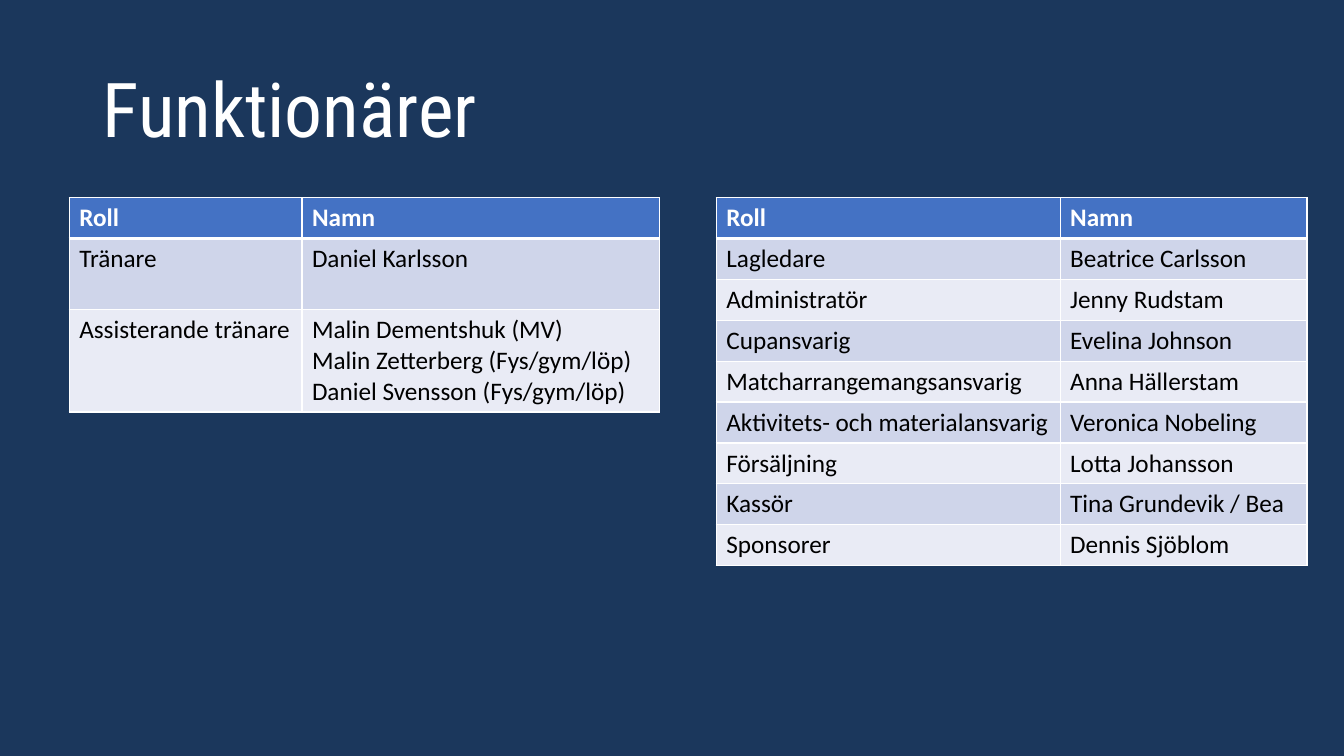
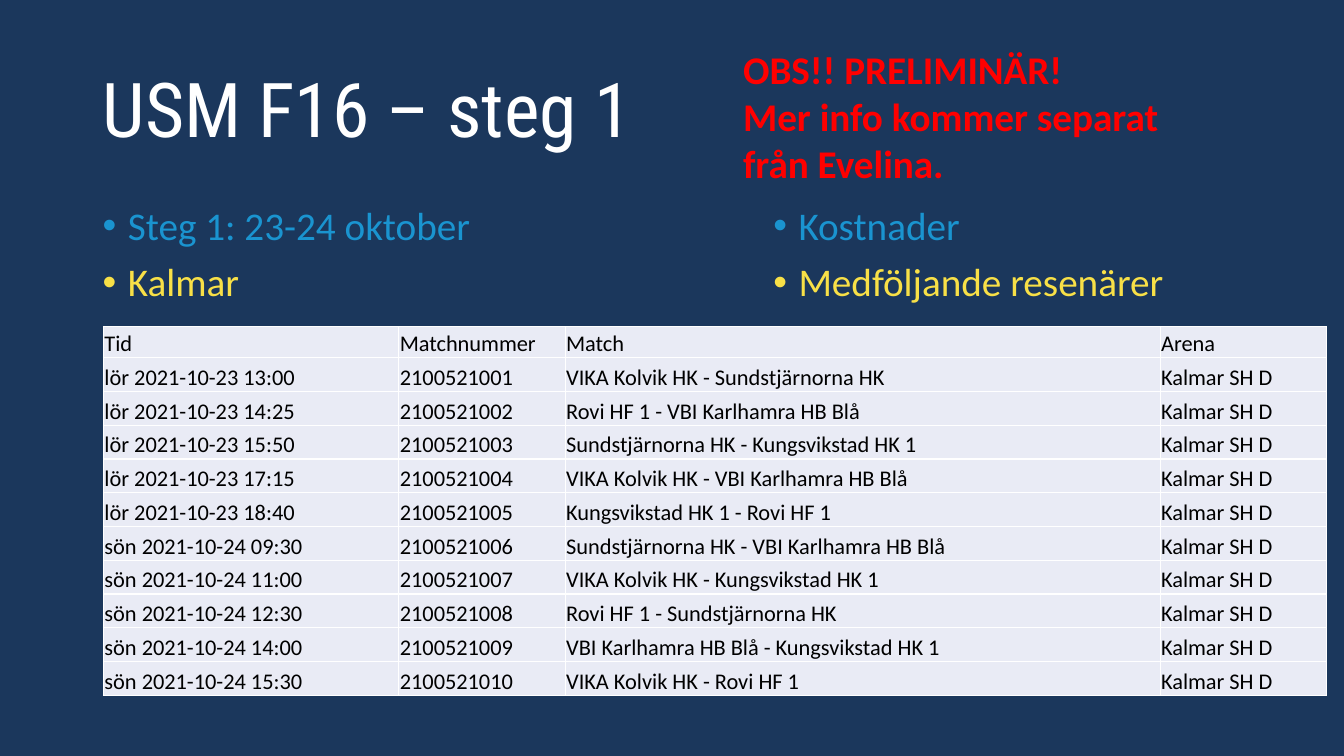
from dataclasses import dataclass

from lxml import etree
from pptx import Presentation
from pptx.dml.color import RGBColor
from pptx.enum.text import MSO_ANCHOR
from pptx.oxml.ns import qn
from pptx.util import Inches, Pt

TOP, MIDDLE, BOTTOM = MSO_ANCHOR.TOP, MSO_ANCHOR.MIDDLE, MSO_ANCHOR.BOTTOM
BLANK_LAYOUT = 6
WIDTH, HEIGHT = Inches(13.33), Inches(7.5)


# Colours, fonts and type sizes
@dataclass(frozen=True)
class Theme:
    background: str = "1B375C"
    white: str = "FFFFFF"
    black: str = "000000"
    header: str = "4472C4"
    band_dark: str = "CFD5EA"
    band_light: str = "E9EBF5"
    blue: str = "1A94D0"
    yellow: str = "F8E047"
    warning: str = "FF0000"
    title_font: str = "Roboto Condensed"
    body_font: str = "Calibri"
    title_size: int = 54
    body_size: int = 28
    table_size: int = 18
    schedule_size: int = 16
    thin_line: float = 1
    thick_line: float = 3


THEME = Theme()

# Positions and sizes in percent of the slide's width and height
TITLE_AREA = (6.9, 5.33, 86.25, 19.33)
NOTICE_AREA = (54.55, 5.33, 35.5, 24.3)
BODY_AREA = (6.9, 26.67, 86.25, 63.5)
COSTS_AREA = (56.8, 26.67, 30.6, 17.6)
COACHES_LEFT, OFFICIALS_LEFT = 5.15, 53.3
ROLES_TOP, ROLES_WIDTH = 26.15, 43.95
SCHEDULE_LEFT, SCHEDULE_TOP, SCHEDULE_WIDTH = 7.7, 43.2, 91
ROLE_ROW, TALL_ROW, TRIPLE_ROW = 5.41, 9.4, 13.55
SCHEDULE_HEADER_ROW, SCHEDULE_ROW = 4.1, 4.47
# Column widths in percent of the table's width
COACH_COLUMNS = (39.4, 60.6)
OFFICIAL_COLUMNS = (58.2, 41.8)
SCHEDULE_COLUMNS = (24.15, 13.6, 48.65, 13.6)

# Table contents
ROLE_HEADER = ("Roll", "Namn")
COACHES = [
    ROLE_HEADER,
    ("Tränare", "Daniel Karlsson"),
    ("Assisterande tränare",
     "Malin Dementshuk (MV)\nMalin Zetterberg (Fys/gym/löp)\n"
     "Daniel Svensson (Fys/gym/löp)"),
]
OFFICIALS = [
    ROLE_HEADER,
    ("Lagledare", "Beatrice Carlsson"),
    ("Administratör", "Jenny Rudstam"),
    ("Cupansvarig", "Evelina Johnson"),
    ("Matcharrangemangsansvarig", "Anna Hällerstam"),
    ("Aktivitets- och materialansvarig", "Veronica Nobeling"),
    ("Försäljning", "Lotta Johansson"),
    ("Kassör", "Tina Grundevik / Bea"),
    ("Sponsorer", "Dennis Sjöblom"),
]
FIRST_MATCH_NUMBER = 2100521001
ARENA = "Kalmar SH D"
VIKA = "VIKA Kolvik HK"
SUND = "Sundstjärnorna HK"
ROVI = "Rovi HF 1"
VBI = "VBI Karlhamra HB Blå"
KUNGSVIK = "Kungsvikstad HK 1"
MATCHES = [
    ("lör 2021-10-23 13:00", VIKA, SUND),
    ("lör 2021-10-23 14:25", ROVI, VBI),
    ("lör 2021-10-23 15:50", SUND, KUNGSVIK),
    ("lör 2021-10-23 17:15", VIKA, VBI),
    ("lör 2021-10-23 18:40", KUNGSVIK, ROVI),
    ("sön 2021-10-24 09:30", SUND, VBI),
    ("sön 2021-10-24 11:00", VIKA, KUNGSVIK),
    ("sön 2021-10-24 12:30", ROVI, SUND),
    ("sön 2021-10-24 14:00", VBI, KUNGSVIK),
    ("sön 2021-10-24 15:30", VIKA, ROVI),
]


def across(percent):
    return int(WIDTH * percent / 100)


def down(percent):
    return int(HEIGHT * percent / 100)


# Text
def format_paragraph(paragraph, size, color, font=THEME.body_font, bold=False):
    for run in paragraph.runs:
        run.font.name = font
        run.font.size = Pt(size)
        run.font.bold = bold
        run.font.color.rgb = RGBColor.from_string(color)


def add_text(slide, area, text, anchor=TOP):
    left, top, width, height = area
    shape = slide.shapes.add_textbox(
        across(left), down(top), across(width), down(height))
    text_frame = shape.text_frame
    text_frame.word_wrap = True
    text_frame.vertical_anchor = anchor
    text_frame.text = text
    return text_frame.paragraphs


def add_title(slide, text):
    for paragraph in add_text(slide, TITLE_AREA, text, MIDDLE):
        paragraph.line_spacing = 0.9
        format_paragraph(paragraph, THEME.title_size, THEME.white,
                         THEME.title_font)


def add_bullets(slide, area, lines):
    paragraphs = add_text(slide, area, "\n".join(lines))
    for paragraph, color in zip(paragraphs, (THEME.blue, THEME.yellow)):
        paragraph.line_spacing = 0.9
        paragraph.space_before = Pt(10)
        format_paragraph(paragraph, THEME.body_size, color)
        properties = paragraph._p.get_or_add_pPr()
        properties.set("marL", str(Inches(0.25)))
        properties.set("indent", str(-Inches(0.25)))
        bullet_font = etree.SubElement(properties, qn("a:buFont"))
        bullet_font.set("typeface", "Arial")
        etree.SubElement(properties, qn("a:buChar")).set("char", "•")


def add_notice(slide, text):
    for paragraph in add_text(slide, NOTICE_AREA, text):
        format_paragraph(paragraph, THEME.body_size, THEME.warning, bold=True)


# Tables
def set_borders(cell, top=THEME.thin_line, bottom=THEME.thin_line):
    properties = cell._tc.get_or_add_tcPr()
    sides = {"L": THEME.thin_line, "R": THEME.thin_line, "T": top, "B": bottom}
    for position, (side, width) in enumerate(sides.items()):
        line = etree.Element(qn(f"a:ln{side}"), w=str(Pt(width)))
        fill = etree.SubElement(line, qn("a:solidFill"))
        etree.SubElement(fill, qn("a:srgbClr")).set("val", THEME.white)
        properties.insert(position, line)


def fill_cell(cell, text, fill, size, color=THEME.black, bold=False):
    cell.text_frame.text = text
    cell.fill.solid()
    cell.fill.fore_color.rgb = RGBColor.from_string(fill)
    for paragraph in cell.text_frame.paragraphs:
        format_paragraph(paragraph, size, color, bold=bold)


def add_table(slide, left, top, width, columns, row_heights):
    table = slide.shapes.add_table(
        len(row_heights), len(columns), across(left), down(top),
        across(width), down(sum(row_heights))).table
    table.first_row = table.horz_banding = False
    for column, share in zip(table.columns, columns):
        column.width = across(width * share / 100)
    for row, height in zip(table.rows, row_heights):
        row.height = down(height)
    return table


def add_role_table(slide, left, columns, row_heights, records):
    table = add_table(slide, left, ROLES_TOP, ROLES_WIDTH, columns, row_heights)
    for index, (row, record) in enumerate(zip(table.rows, records)):
        is_header = index == 0
        band = THEME.band_dark if index % 2 else THEME.band_light
        for cell, text in zip(row.cells, record):
            if is_header:
                fill_cell(cell, text, THEME.header, THEME.table_size,
                          THEME.white, bold=True)
                set_borders(cell, bottom=THEME.thick_line)
            else:
                fill_cell(cell, text, band, THEME.table_size)
                set_borders(cell, top=THEME.thick_line if index == 1
                            else THEME.thin_line)


def add_schedule(slide):
    records = [("Tid", "Matchnummer", "Match", "Arena")]
    for number, (time, home, away) in enumerate(MATCHES, FIRST_MATCH_NUMBER):
        records.append((time, str(number), f"{home} - {away}", ARENA))
    row_heights = [SCHEDULE_HEADER_ROW] + [SCHEDULE_ROW] * len(MATCHES)
    table = add_table(slide, SCHEDULE_LEFT, SCHEDULE_TOP, SCHEDULE_WIDTH,
                      SCHEDULE_COLUMNS, row_heights)
    for row, record in zip(table.rows, records):
        for cell, text in zip(row.cells, record):
            fill_cell(cell, text, THEME.band_light, THEME.schedule_size)
            cell.vertical_anchor = BOTTOM
            cell.margin_left = cell.margin_right = Inches(0.01)
            cell.margin_top, cell.margin_bottom = Inches(0.01), 0
            set_borders(cell)


# Slides
def add_slide(presentation, title):
    slide = presentation.slides.add_slide(
        presentation.slide_layouts[BLANK_LAYOUT])
    add_title(slide, title)
    return slide


def add_officials_slide(presentation):
    slide = add_slide(presentation, "Funktionärer")
    add_role_table(slide, COACHES_LEFT, COACH_COLUMNS,
                   [ROLE_ROW, TALL_ROW, TRIPLE_ROW], COACHES)
    add_role_table(slide, OFFICIALS_LEFT, OFFICIAL_COLUMNS,
                   [ROLE_ROW] * len(OFFICIALS), OFFICIALS)


def add_tournament_slide(presentation):
    slide = add_slide(presentation, "USM F16 – steg 1")
    add_bullets(slide, BODY_AREA, ["Steg 1: 23-24 oktober", "Kalmar"])
    add_schedule(slide)
    add_bullets(slide, COSTS_AREA, ["Kostnader", "Medföljande resenärer"])
    add_notice(slide, "OBS!! PRELIMINÄR!\n"
                      "Mer info kommer separat från Evelina.")


def main():
    presentation = Presentation()
    presentation.slide_width, presentation.slide_height = WIDTH, HEIGHT
    background = presentation.slide_master.background.fill
    background.solid()
    background.fore_color.rgb = RGBColor.from_string(THEME.background)
    add_officials_slide(presentation)
    add_tournament_slide(presentation)
    presentation.save("out.pptx")


if __name__ == "__main__":
    main()
